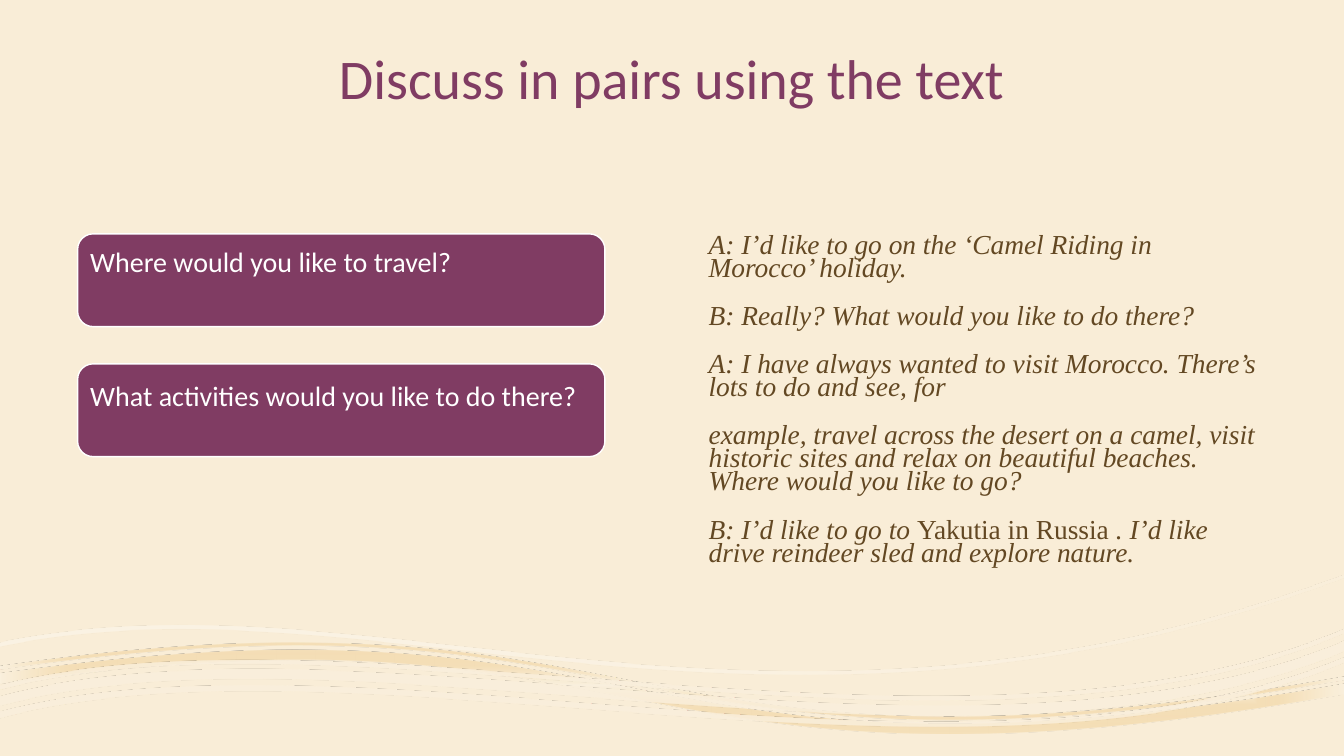
"""Build the slide 'Discuss in pairs using the text'."""
from math import cos, radians, sin
from lxml.etree import SubElement
from pptx import Presentation
from pptx.dml.color import RGBColor
from pptx.enum.shapes import MSO_SHAPE as Shape
from pptx.enum.text import MSO_ANCHOR as Anchor, PP_ALIGN as Align
from pptx.oxml.ns import qn
from pptx.util import Inches, Pt

BACKGROUND, PLUM, BROWN, WHITE = "F9EDD7", "803C63", "634823", "FFFFFF"
TITLE = "Discuss in pairs using the text"
TITLE_FONT = {"name": "Calibri", "size": Pt(40), "color": PLUM}
CARD_FONT = {"name": "Calibri", "size": Pt(20), "color": WHITE}
DIALOGUE_FONT = {"name": "Times New Roman", "size": Pt(19.6), "color": BROWN}

# question, line spacing
CARDS = [
    ("Where would you like to travel?", 0.9),
    ("What activities would you like to do there?", 1.0),
]
CARD_LEFT, CARD_TOP, CARD_WIDTH, CARD_HEIGHT, CARD_STEP = 0.77, 2.32, 5.23, 0.92, 1.29

# each paragraph alternates italic and upright runs
DIALOGUE = [
    ["A: I’d like to go on the ‘Camel Riding in Morocco’ holiday."],
    ["B: Really? What would you like to do there?"],
    ["A: I have always wanted to visit Morocco. There’s lots to do and see, for"],
    ["example, travel across the desert on a camel, visit historic sites and relax on "
     "beautiful beaches. Where would you like to go?"],
    ["B: I’d like to go to ", "Yakutia in Russia ",
     ". I’d like drive reindeer sled and explore nature."],
]

# a band is a start point and then cubic curves or lines, in slide inches
# stops are position, colour, opacity
WAVES = [
    {"box": (0.01, 6.12, 13.31, 1.35),
     "bands": [
        [[(3.06, 6.45)], [(6.7, 6.47), (7.38, 7.82), (13.33, 6.78)], [(13.33, 6.88)],
         [(6.02, 8.16), (6.67, 5.83), (0, 6.78)], [(0, 6.68)],
         [(1.24, 6.51), (2.22, 6.44), (3.06, 6.45)]],
        [[(3.06, 6.38)], [(6.7, 6.4), (7.38, 7.75), (13.33, 6.71)], [(13.33, 6.74)],
         [(6.02, 8.02), (6.67, 5.69), (0, 6.64)], [(0, 6.61)],
         [(1.24, 6.43), (2.22, 6.37), (3.06, 6.38)]]],
     "stops": [(0, "FAF1DF", 90), (18, "F4DEB7", 100), (37, "F4DDB3", 90), (100, "FAF1DF", 100)],
     "path": "shape", "focus": (50, 50, 50, 50)},
    {"box": (0.03, 5.88, 13.35, 1.71),
     "bands": [
        [[(13.33, 5.7)], [(13.33, 5.73)], [(7.54, 7.88), (3.73, 5.63), (0, 6.41)],
         [(0, 6.37)], [(3.73, 5.59), (7.54, 7.84), (13.33, 5.7)]]],
     "stops": [(36, WHITE, 30), (100, BACKGROUND, 48)], "angle": 45},
    {"box": (-0.01, 6.25, 13.36, 1.15),
     "bands": [
        [[(13.33, 6.52)], [(13.33, 6.57)], [(9.55, 8.15), (3.49, 6.18), (0, 7.12)],
         [(0, 7.06)], [(3.49, 6.12), (9.55, 8.1), (13.33, 6.52)]],
        [[(13.33, 6.36)], [(13.33, 6.46)], [(9.55, 8.04), (3.49, 6.06), (0, 7)],
         [(0, 6.91)], [(3.49, 5.96), (9.55, 7.94), (13.33, 6.36)]],
        [[(13.33, 6.24)], [(13.33, 6.28)], [(9.58, 7.9), (3.51, 5.93), (0, 6.84)],
         [(0, 6.8)], [(3.51, 5.89), (9.58, 7.86), (13.33, 6.24)]]],
     "stops": [(36, WHITE, 47), (100, "FAEFDC", 82)],
     "path": "rect", "focus": (100, 100, 0, 0)},
]
WAVE_ROTATION = 356.5


def color(hex_value):
    return RGBColor.from_string(hex_value)


def local_point(point, box):
    """Turn a slide point back by the wave rotation, in EMU from the box corner."""
    left, top, width, height = box
    dx, dy = point[0] - left - width / 2, point[1] - top - height / 2
    turn = radians(-WAVE_ROTATION)
    return (Inches(width / 2 + dx * cos(turn) - dy * sin(turn)),
            Inches(height / 2 + dx * sin(turn) + dy * cos(turn)))


def add_gradient(shape, wave):
    shape.fill.background()
    gradient = shape._element.spPr.find(qn("a:noFill"))
    gradient.tag = qn("a:gradFill")
    gradient.set("rotWithShape", "1")
    stop_list = SubElement(gradient, qn("a:gsLst"))
    for position, hex_value, opacity in wave["stops"]:
        stop = SubElement(stop_list, qn("a:gs"), pos=str(position * 1000))
        tint = SubElement(stop, qn("a:srgbClr"), val=hex_value)
        if opacity < 100:
            SubElement(tint, qn("a:alpha"), val=str(opacity * 1000))
    if "angle" in wave:
        SubElement(gradient, qn("a:lin"), ang=str(wave["angle"] * 60000), scaled="0")
    else:
        spread = SubElement(gradient, qn("a:path"), path=wave["path"])
        focus = {side: str(value * 1000) for side, value in zip("ltrb", wave["focus"])}
        SubElement(spread, qn("a:fillToRect"), **focus)


def draw_curves(shape, wave):
    outline = next(shape._element.iter(qn("a:path")))
    for child in list(outline):
        outline.remove(child)
    outline.set("w", str(shape.width))
    outline.set("h", str(shape.height))
    for band in wave["bands"]:
        for index, points in enumerate(band):
            name = "a:cubicBezTo" if len(points) == 3 else "a:lnTo" if index else "a:moveTo"
            command = SubElement(outline, qn(name))
            for point in points:
                x, y = local_point(point, wave["box"])
                SubElement(command, qn("a:pt"), x=str(x), y=str(y))
        SubElement(outline, qn("a:close"))


def add_wave(slide, wave):
    left, top, width, height = map(Inches, wave["box"])
    builder = slide.shapes.build_freeform(left, top)
    builder.add_line_segments([(left + width, top + height)])
    shape = builder.convert_to_shape()
    draw_curves(shape, wave)
    shape.rotation = WAVE_ROTATION
    shape.shadow.inherit = False
    shape.line.fill.background()
    add_gradient(shape, wave)


def add_run(paragraph, text, values, italic=False):
    run = paragraph.add_run()
    run.text = text
    for name, value in {**values, "italic": italic}.items():
        if name == "color":
            run.font.color.rgb = color(value)
        else:
            setattr(run.font, name, value)


def add_text_box(slide, left, top, width, height, anchor):
    box = slide.shapes.add_textbox(*map(Inches, (left, top, width, height)))
    box.text_frame.word_wrap = True
    box.text_frame.vertical_anchor = anchor
    return box.text_frame


def add_title(slide):
    paragraph = add_text_box(slide, 1.41, 0.34, 10.5, 0.82, Anchor.BOTTOM).paragraphs[0]
    paragraph.alignment = Align.CENTER
    paragraph.line_spacing = 0.9
    add_run(paragraph, TITLE, TITLE_FONT)


def add_dialogue(slide):
    frame = add_text_box(slide, 6.88, 2.29, 5.72, 3.6, Anchor.TOP)
    for index, parts in enumerate(DIALOGUE):
        paragraph = frame.add_paragraph() if index else frame.paragraphs[0]
        paragraph.line_spacing = 0.7
        paragraph.space_before = Pt(18 if index else 0)
        paragraph._p.get_or_add_pPr().set("marL", str(Inches(0.05)))
        for part_index, text in enumerate(parts):
            add_run(paragraph, text, DIALOGUE_FONT, italic=part_index % 2 == 0)


def add_card(slide, index, question, spacing):
    box = (CARD_LEFT, CARD_TOP + index * CARD_STEP, CARD_WIDTH, CARD_HEIGHT)
    card = slide.shapes.add_shape(Shape.ROUNDED_RECTANGLE, *map(Inches, box))
    card.shadow.inherit = False
    card.fill.solid()
    card.fill.fore_color.rgb = color(PLUM)
    card.line.color.rgb = color(WHITE)
    card.line.width = Pt(1)
    frame_format = {"word_wrap": True, "vertical_anchor": Anchor.TOP,
                    "margin_left": Inches(0.08), "margin_right": Inches(0.08),
                    "margin_top": Inches(0.1)}
    for name, value in frame_format.items():
        setattr(card.text_frame, name, value)
    paragraph = card.text_frame.paragraphs[0]
    paragraph.alignment = Align.LEFT
    paragraph.line_spacing = spacing
    add_run(paragraph, question, CARD_FONT)


def main():
    presentation = Presentation()
    presentation.slide_width = Inches(13.33)
    presentation.slide_height = Inches(7.5)
    slide = presentation.slides.add_slide(presentation.slide_layouts[6])
    slide.background.fill.solid()
    slide.background.fill.fore_color.rgb = color(BACKGROUND)
    for wave in WAVES:
        add_wave(slide, wave)
    add_title(slide)
    add_dialogue(slide)
    for index, card in enumerate(CARDS):
        add_card(slide, index, *card)
    presentation.save("out.pptx")


if __name__ == "__main__":
    main()
